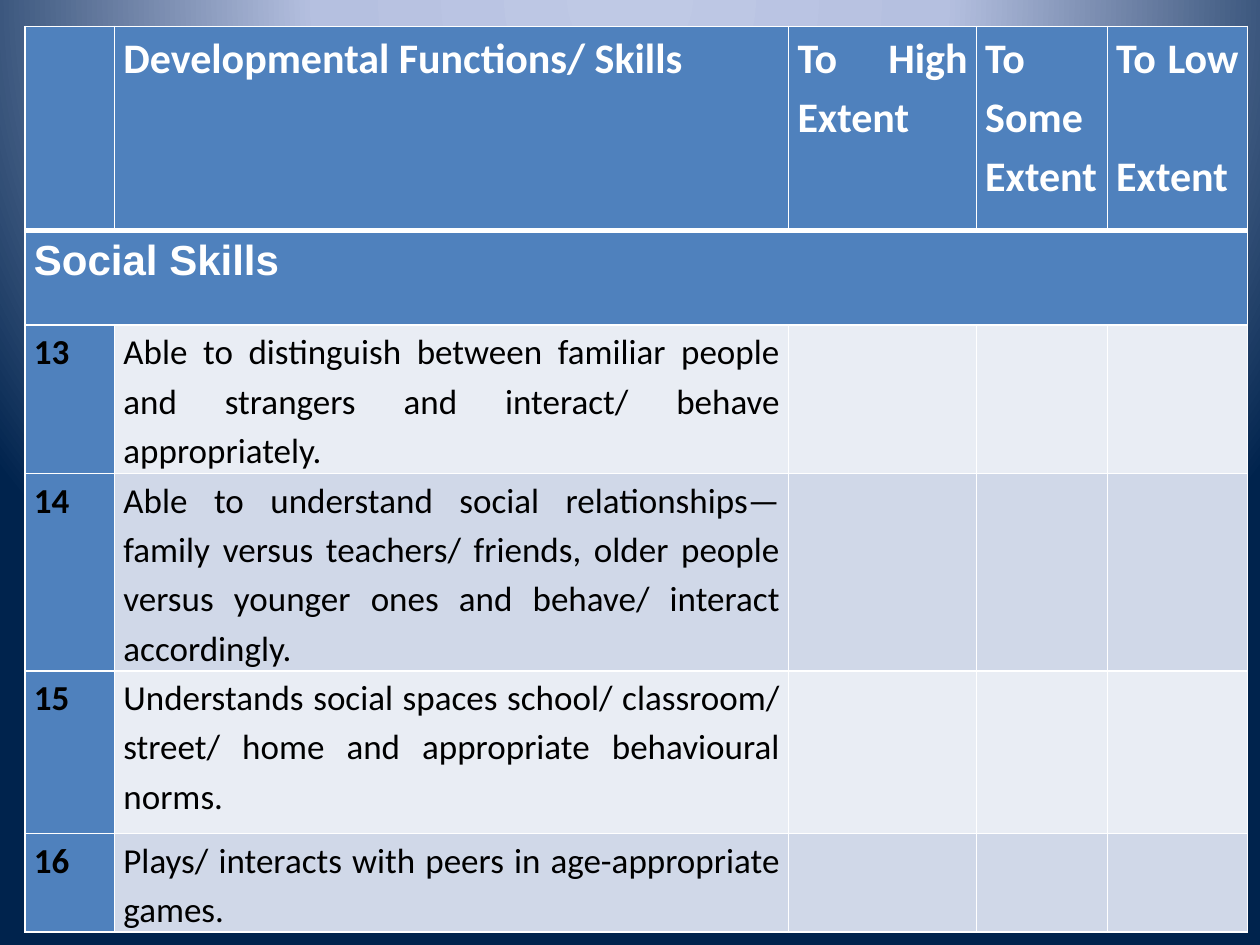
from lxml import etree
from pptx import Presentation
from pptx.dml.color import RGBColor
from pptx.enum.text import PP_ALIGN
from pptx.oxml import parse_xml
from pptx.oxml.ns import qn
from pptx.util import Inches, Pt

BLUE = RGBColor(0x4F, 0x81, 0xBD)
PALE = RGBColor(0xE9, 0xED, 0xF4)
MID = RGBColor(0xD0, 0xD8, 0xE8)
WHITE = RGBColor(0xFF, 0xFF, 0xFF)
BLACK = RGBColor(0, 0, 0)

# Content
HEADERS = ["", "Developmental Functions/ Skills", "To High Extent",
           "To Some Extent", "To Low\v\vExtent"]
SECTION = "Social Skills"
SKILLS = [
    ("13", "Able to distinguish between familiar people and strangers and "
           "interact/ behave appropriately."),
    ("14", "Able to understand social relationships—family versus teachers/ "
           "friends, older people versus younger ones and behave/ interact "
           "accordingly."),
    ("15", "Understands social spaces school/ classroom/ street/ home and "
           "appropriate behavioural norms."),
    ("16", "Plays/ interacts with peers in age-appropriate games."),
]
COL_WIDTHS = [0.71, 5.35, 1.49, 1.04, 1.11]
ROW_HEIGHTS = [1.62, 0.75, 1.18, 1.5, 1.29, 0.63]
GRADIENT = [(0, "BFC9E5"), (40, "B5C0E0"), (100, "00234D")]


def set_background(s):
    stops = "".join(f'<a:gs pos="{pos * 1000}"><a:srgbClr val="{color}"/></a:gs>'
                    for pos, color in GRADIENT)
    fill = parse_xml(
        '<a:gradFill xmlns:a="http://schemas.openxmlformats.org/drawingml/2006/main"'
        f' rotWithShape="1"><a:gsLst>{stops}</a:gsLst><a:path path="circle">'
        '<a:fillToRect l="50000" t="-80000" r="50000" b="180000"/>'
        '</a:path></a:gradFill>')
    s.background.fill.solid()
    bg_pr = s.background._cSld.bg.bgPr
    bg_pr.replace(bg_pr.find(qn("a:solidFill")), fill)


def set_borders(cell, top=1, bottom=1):
    tc_pr = cell._tc.get_or_add_tcPr()
    for side, width in (("L", 1), ("R", 1), ("T", top), ("B", bottom)):
        ln = etree.SubElement(tc_pr, qn(f"a:ln{side}"), w=str(Pt(width)))
        fill = etree.SubElement(ln, qn("a:solidFill"))
        etree.SubElement(fill, qn("a:srgbClr"), val=str(WHITE))


def set_fill(cell, color):
    cell.fill.solid()
    cell.fill.fore_color.rgb = color


def write(cell, text, size, color, bold=True, font="Calibri"):
    cell.margin_left = cell.margin_right = Inches(0.07)
    cell.margin_top = cell.margin_bottom = 0
    p = cell.text_frame.paragraphs[0]
    p.alignment = PP_ALIGN.JUSTIFY
    p.line_spacing = 1.15
    for i, part in enumerate(text.split("\v")):
        if i:
            p.add_line_break()
        if part:
            r = p.add_run()
            r.text = part
            r.font.name, r.font.size, r.font.bold = font, Pt(size), bold
            r.font.color.rgb = color
    for br in p._p.findall(qn("a:br")):
        etree.SubElement(br, qn("a:rPr"), sz=str(size * 100))


prs = Presentation()
prs.slide_width, prs.slide_height = Inches(10), Inches(7.5)
s = prs.slides.add_slide(prs.slide_layouts[6])
set_background(s)

# Table grid
table = s.shapes.add_table(
    len(ROW_HEIGHTS), len(COL_WIDTHS), Inches(0.2), Inches(0.21),
    Inches(sum(COL_WIDTHS)), Inches(sum(ROW_HEIGHTS))).table
for col, width in zip(table.columns, COL_WIDTHS):
    col.width = Inches(width)
for row, height in zip(table.rows, ROW_HEIGHTS):
    row.height = Inches(height)

# Borders and fills
for i, row in enumerate(table.rows):
    for j, cell in enumerate(row.cells):
        set_borders(cell, top=3 if i == 1 else 1, bottom=3 if i == 0 else 1)
        set_fill(cell, BLUE if i < 2 or j == 0 else (PALE, MID)[i % 2])

# Header and section rows
for j, text in enumerate(HEADERS):
    if text:
        write(table.cell(0, j), text, 24, WHITE)
table.cell(1, 0).merge(table.cell(1, len(COL_WIDTHS) - 1))
write(table.cell(1, 0), SECTION, 24, WHITE, font="Arial")

# Skill rows
for i, (number, skill) in enumerate(SKILLS, start=2):
    write(table.cell(i, 0), number, 20, BLACK)
    write(table.cell(i, 1), skill, 20, BLACK, bold=False)

prs.save("out.pptx")
